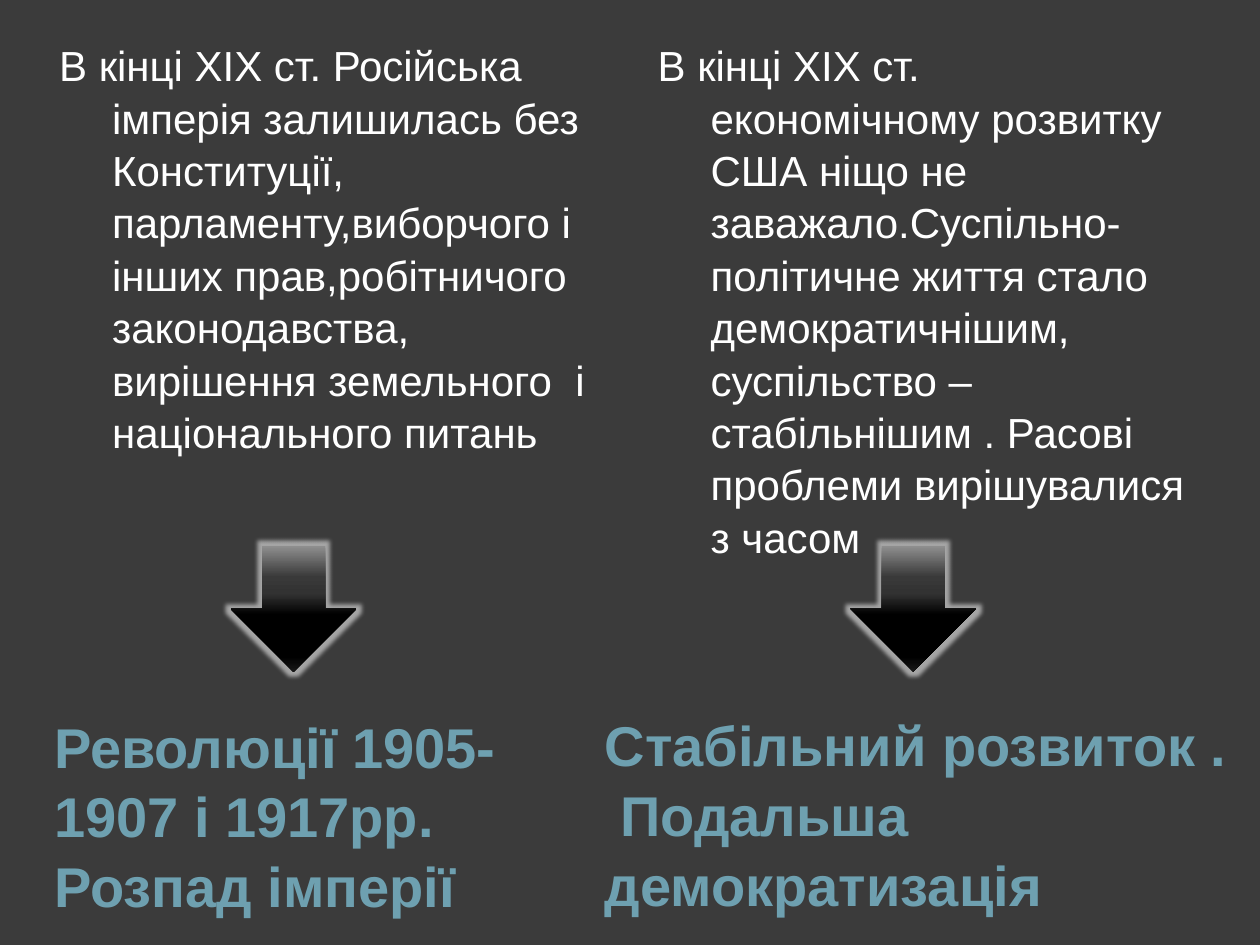
"""Build a slide comparing the outcomes of two countries' development."""
from dataclasses import dataclass
from lxml.etree import SubElement as Sub
from pptx import Presentation
from pptx.dml.color import RGBColor as Rgb
from pptx.enum.shapes import MSO_SHAPE as Shape
from pptx.enum.text import MSO_ANCHOR as Anchor, MSO_AUTO_SIZE as Auto
from pptx.oxml.ns import qn
from pptx.util import Inches, Pt


@dataclass
class Theme:
    font: str = "Arial"
    back: str = "3B3B3B"
    text: str = "FFFFFF"
    accent: str = "6EA0B0"
    glow: str = "A6A6A6"
    body: int = 24
    head: int = 32
    stops: tuple = ((0, "909090"), (25, "393939"), (38, "323232"), (55, "000000"),
                    (88, "000000"), (100, "181818"))


theme = Theme()
deck = Presentation()
deck.slide_width, deck.slide_height = Inches(10), Inches(7.5)
slide = deck.slides.add_slide(deck.slide_layouts[4])
slide.background.fill.solid()
slide.background.fill.fore_color.rgb = Rgb.from_string(theme.back)
title = slide.shapes.title.element
title.getparent().remove(title)


def fill_box(slot, text, box, size, color, bold=False, left=0, hang=0):
    holder = slide.placeholders[slot]
    holder.left, holder.top, holder.width, holder.height = map(Inches, box)
    frame = holder.text_frame
    frame.text = text
    frame.word_wrap = True
    frame.auto_size = Auto.NONE
    frame.vertical_anchor = Anchor.TOP
    para = frame.paragraphs[0]
    para.line_spacing = 1.04
    props = para._p.get_or_add_pPr()
    props.set("marL", str(Inches(left)))
    props.set("indent", str(Inches(hang)))
    Sub(props, qn("a:buNone"))
    font = para.runs[0].font
    font.name, font.size, font.bold = theme.font, Pt(size), bold
    font.color.rgb = Rgb.from_string(color)


heads = (
    (1, "Революції 1905-1907 і 1917рр. Розпад імперії", (0.33, 5.58, 4.42, 1.92)),
    (3, "Стабільний розвиток .  Подальша демократизація", (4.7, 5.57, 5.17, 1.58)),
)
for slot, text, box in heads:
    fill_box(slot, text, box, theme.head, theme.accent, bold=True)

bodies = (
    (2, "В кінці XIX ст. Російська імперія залишилась без Конституції, "
        "парламенту,виборчого і інших прав,робітничого законодавства, "
        "вирішення земельного  і національного питань", (0.33, 0.25, 4.42, 3.5)),
    (4, "В кінці XIX ст. економічному розвитку США ніщо не "
        "заважало.Суспільно-політичне життя стало демократичнішим, "
        "суспільство – стабільнішим . Расові проблеми вирішувалися з часом",
     (5.08, 0.25, 4.42, 4.17)),
)
for slot, text, box in bodies:
    fill_box(slot, text, box, theme.body, theme.text, left=0.46, hang=-0.42)

for left in (1.83, 6.75):
    arrow = slide.shapes.add_shape(Shape.DOWN_ARROW, Inches(left), Inches(4.33),
                                   Inches(1), Inches(1))
    arrow.line.fill.background()
    arrow.shadow.inherit = False
    arrow.fill.gradient()
    arrow.fill.gradient_angle = 270
    props = arrow.element.spPr
    ramp = props.find(".//" + qn("a:gsLst"))
    for stop in list(ramp):
        ramp.remove(stop)
    for pos, color in theme.stops:
        stop = Sub(ramp, qn("a:gs"), pos=str(pos * 1000))
        Sub(stop, qn("a:srgbClr"), val=color)
    glow = Sub(props.find(qn("a:effectLst")), qn("a:glow"), rad=str(Pt(5)))
    Sub(glow, qn("a:srgbClr"), val=theme.glow)

deck.save("out.pptx")
